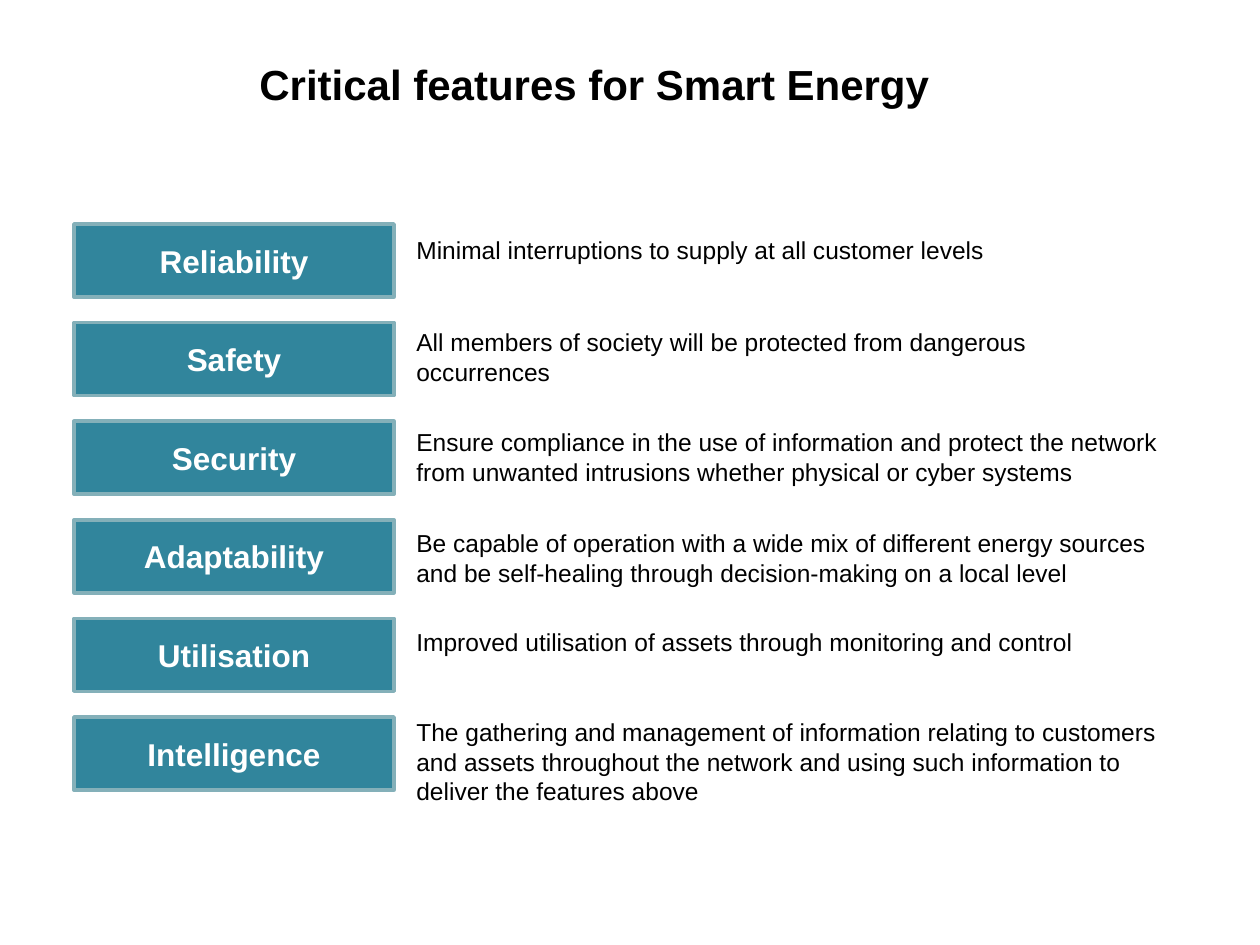
from pptx import Presentation
from pptx.dml.color import RGBColor
from pptx.enum.shapes import MSO_SHAPE
from pptx.enum.text import MSO_ANCHOR, PP_ALIGN
from pptx.util import Emu, Pt

RECT = MSO_SHAPE.RECTANGLE
TOP, MIDDLE = MSO_ANCHOR.TOP, MSO_ANCHOR.MIDDLE
LEFT, CENTER = PP_ALIGN.LEFT, PP_ALIGN.CENTER

TITLE = "Critical features for Smart Energy"
FEATURES = [
    ("Reliability", "Minimal interruptions to supply at all customer levels", 229, 42),
    ("Safety", "All members of society will be protected from dangerous occurrences", 321, 72),
    ("Security", "Ensure compliance in the use of information and protect the network "
     "from unwanted intrusions whether physical or cyber systems", 421, 72),
    ("Adaptability", "Be capable of operation with a wide mix of different energy sources "
     "and be self-healing through decision-making on a local level", 522, 72),
    ("Utilisation", "Improved utilisation of assets through monitoring and control", 621, 42),
    ("Intelligence", "The gathering and management of information relating to customers "
     "and assets throughout the network and using such information to "
     "deliver the features above", 711, 101),
]

THEME = {
    "fill": RGBColor.from_string("31859C"),
    "line": RGBColor.from_string("84B0B9"),
    "line_width": Pt(2),
    "title": {"name": "Arial", "size": Pt(24), "bold": True, "color": "000000"},
    "label": {"name": "Arial", "size": Pt(18), "bold": True, "color": "FFFFFF"},
    "body": {"name": "Arial", "size": Pt(14), "bold": False, "color": "000000"},
}

SLIDE_W, SLIDE_H = 1260, 945
LABEL_X, LABEL_W, LABEL_H = 74, 320, 73
FIRST_Y, LAST_Y = 224, 717
BODY_X, BODY_W = 404, 769


def px(value):
    return Emu(round(value * 914400 / 126))


def write(sp, text, style, anchor=TOP, align=LEFT):
    tf = sp.text_frame
    tf.word_wrap = True
    tf.vertical_anchor = anchor
    p = tf.paragraphs[0]
    p.alignment = align
    r = p.add_run()
    r.text = text
    for key, value in THEME[style].items():
        if key == "color":
            r.font.color.rgb = RGBColor.from_string(value)
        else:
            setattr(r.font, key, value)


def add_text(s, box, text, style):
    write(s.shapes.add_textbox(*map(px, box)), text, style)


def add_label(s, box, text):
    sp = s.shapes.add_shape(RECT, *map(px, box))
    sp.shadow.inherit = False
    sp.fill.solid()
    sp.fill.fore_color.rgb = THEME["fill"]
    sp.line.color.rgb = THEME["line"]
    sp.line.width = THEME["line_width"]
    write(sp, text, "label", MIDDLE, CENTER)


def main():
    prs = Presentation()
    prs.slide_width, prs.slide_height = px(SLIDE_W), px(SLIDE_H)
    s = prs.slides.add_slide(prs.slide_layouts[6])
    add_text(s, (247, 52, 805, 110), TITLE, "title")
    pitch = (LAST_Y - FIRST_Y) / (len(FEATURES) - 1)
    for i, (name, description, body_y, body_h) in enumerate(FEATURES):
        add_label(s, (LABEL_X, FIRST_Y + i * pitch, LABEL_W, LABEL_H), name)
        add_text(s, (BODY_X, body_y, BODY_W, body_h), description, "body")
    prs.save("out.pptx")


if __name__ == "__main__":
    main()
